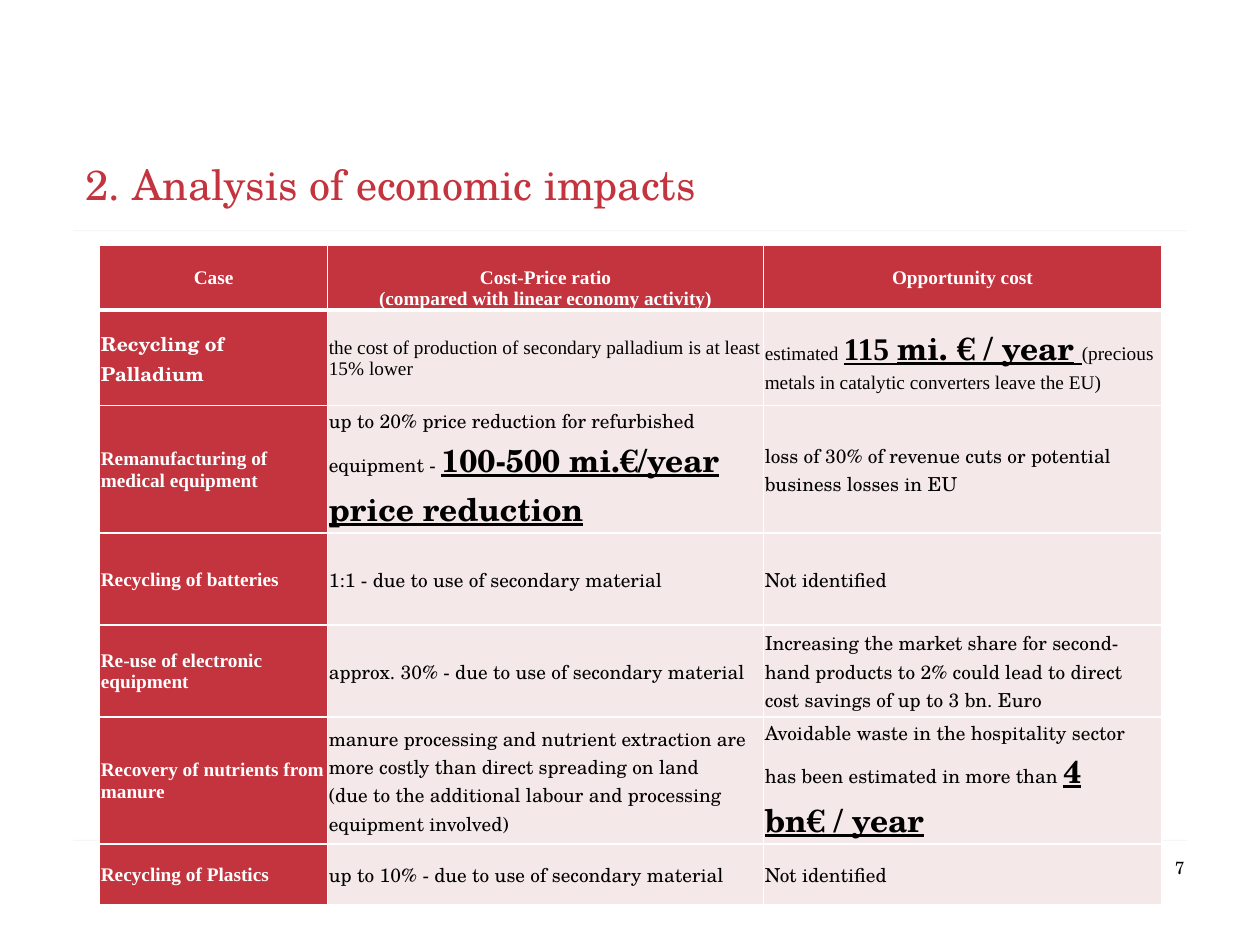
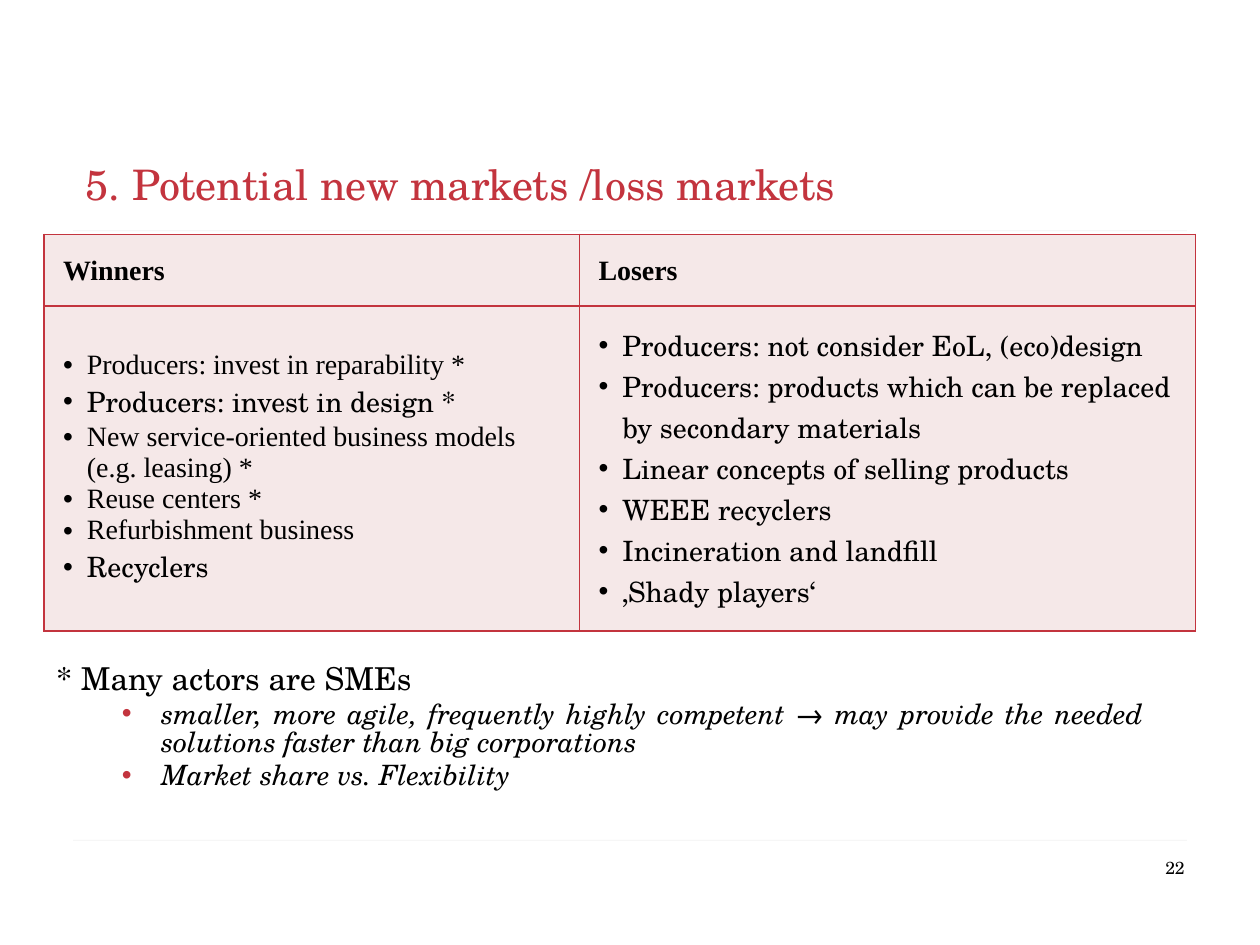
from copy import deepcopy
from lxml import etree
from pptx import Presentation
from pptx.dml.color import RGBColor
from pptx.enum.shapes import MSO_CONNECTOR
from pptx.enum.text import MSO_ANCHOR, PP_ALIGN
from pptx.oxml.ns import qn
from pptx.util import Inches, Pt

LINE = MSO_CONNECTOR.STRAIGHT
MID, LOW = MSO_ANCHOR.MIDDLE, MSO_ANCHOR.BOTTOM
LEFT, MIDST, RIGHT, FULL = PP_ALIGN.LEFT, PP_ALIGN.CENTER, PP_ALIGN.RIGHT, PP_ALIGN.JUSTIFY
COLS = {"red": "C3343E", "pink": "F5E8E8", "rule": "E7E6E6", "ink": "000000", "white": "FFFFFF"}
SERIF, ROMAN = "TeX Gyre Schola", "Times New Roman"

BODY = {"name": SERIF, "size": 11, "color": "ink"}
PLAIN = {**BODY, "name": ROMAN}
LABEL = {**PLAIN, "color": "white", "bold": True}
BIG = {**BODY, "size": 18, "bold": True, "underline": True}
BIGROM = {**BIG, "name": ROMAN}
TITLE = {"name": SERIF, "size": 24, "color": "red"}
PAGE = {**BODY, "size": 10}
ITEM = {**BODY, "size": 16}
ROMIT = {**ITEM, "name": ROMAN}
HEAD = {**ROMIT, "bold": True}
NOTE = {**BODY, "size": 18}
SUB = {**ITEM, "italic": True}


def write(para, runs, align=LEFT, dot=None, ind=0, hang=0):
    para.alignment = align
    if ind:
        props = para._p.get_or_add_pPr()
        props.set("marL", str(Inches(ind)))
        props.set("indent", str(-Inches(hang)))
        tint = etree.SubElement(etree.SubElement(props, qn("a:buClr")), qn("a:srgbClr"))
        tint.set("val", COLS[dot])
        etree.SubElement(props, qn("a:buFont")).set("typeface", "Arial")
        etree.SubElement(props, qn("a:buChar")).set("char", "•")
    for text, form in runs:
        for num, part in enumerate(text.split("\n")):
            if num:
                para.add_line_break()
                para._p.findall(qn("a:br"))[-1].append(deepcopy(run._r.rPr))
            run = para.add_run()
            run.text = part
            for key, val in form.items():
                if key == "color":
                    run.font.color.rgb = RGBColor.from_string(COLS[val])
                else:
                    setattr(run.font, key, Pt(val) if key == "size" else val)


def style(cell, fill, edge, pads, anchor, top=1, base=1):
    props = cell._tc.get_or_add_tcPr()
    for side, width in zip("LRTB", (1, 1, top, base)):
        line = etree.SubElement(props, qn("a:ln" + side), w=str(Pt(width)))
        tint = etree.SubElement(line, qn("a:solidFill"))
        etree.SubElement(tint, qn("a:srgbClr")).set("val", COLS[edge])
    cell.fill.solid()
    cell.fill.fore_color.rgb = RGBColor.from_string(COLS[fill])
    for side, pad in zip(("left", "right", "top", "bottom"), pads):
        setattr(cell, "margin_" + side, Inches(pad))
    cell.vertical_anchor = anchor


prs = Presentation()
prs.slide_width, prs.slide_height = Inches(10), Inches(7.5)

cases = [
    [[("Case", LABEL)],
     [("Cost-Price ratio\n(compared with linear economy activity)", LABEL)],
     [("Opportunity cost", LABEL)]],
    [[("Recycling of Palladium", {**LABEL, "name": SERIF})],
     [("the cost of production of secondary palladium is at least 15% lower", PLAIN)],
     [("estimated ", PLAIN), ("115 ", BIGROM), ("mi. € / year", BIG), (" ", BIGROM),
      ("(precious metals in catalytic converters leave the EU)", PLAIN)]],
    [[("Remanufacturing of medical equipment", LABEL)],
     [("up to 20% price reduction for refurbished equipment - ", BODY),
      ("100-500 mi.€/year price reduction", BIG)],
     [("loss of 30% of revenue cuts or potential business losses in EU", BODY)]],
    [[("Recycling of batteries", LABEL)],
     [("1:1 - due to use of secondary material", BODY)],
     [("Not identified", BODY)]],
    [[("Re-use of electronic equipment", LABEL)],
     [("approx. 30% - due to use of secondary material", BODY)],
     [("Increasing the market share for second-hand products to 2% "
       "could lead to direct cost savings of up to 3 bn. Euro", BODY)]],
    [[("Recovery of nutrients from manure", LABEL)],
     [("manure processing and nutrient extraction are more costly than direct spreading on land\n"
       "(due to the additional labour and processing equipment involved)", BODY)],
     [("Avoidable waste in the hospitality sector has been estimated in more than ", BODY),
      ("4 bn€ / year", BIG)]],
    [[("Recycling of Plastics", LABEL)],
     [("up to 10% - due to use of secondary material", BODY)],
     [("Not identified", BODY)]],
]
sides = [
    ("Winners", [
        ("Producers: invest in reparability *", ROMIT),
        ("Producers: invest in design *", ITEM),
        ("New service-oriented business models (e.g. leasing) *", ROMIT),
        ("Reuse centers *", ROMIT),
        ("Refurbishment business", ROMIT),
        ("Recyclers", ITEM)]),
    ("Losers", [(text, ITEM) for text in (
        "Producers: not consider EoL, (eco)design",
        "Producers: products which can be replaced by secondary materials",
        "Linear concepts of selling products",
        "WEEE recyclers",
        "Incineration and landfill",
        "‚Shady players‘")]),
]
pages = [
    ("2. Analysis of economic impacts", "7", (0.79, 1.95),
     [1.81, 3.46, 3.16], [0.51, 0.76, 1.01, 0.73, 0.73, 1.01, 0.48]),
    ("5. Potential new markets /loss markets", "22", (0.35, 1.86), [4.25, 4.89], [0.54, 2.58]),
]

slides, grids = [], []
for title, page, spot, wides, highs in pages:
    slide = prs.slides.add_slide(prs.slide_layouts[6])
    for y in (6.67, 1.83):
        rule = slide.shapes.add_connector(LINE, Inches(0.58), Inches(y), Inches(9.42), Inches(y))
        rule.line.width = Pt(0.5)
        rule.line.color.rgb = RGBColor.from_string(COLS["rule"])
        tint = rule._element.spPr.find(".//" + qn("a:srgbClr"))
        etree.SubElement(tint, qn("a:alpha")).set("val", "35000")
        etree.SubElement(rule._element.spPr, qn("a:effectLst"))
    for text, form, area, align in (
            (title, TITLE, (0.58, 1.17, 8.83, 0.58), LEFT),
            (page, PAGE, (8.58, 6.75, 0.92, 0.33), RIGHT)):
        frame = slide.shapes.add_textbox(*map(Inches, area)).text_frame
        frame.word_wrap = True
        if form is TITLE:
            frame.vertical_anchor = MID
        write(frame.paragraphs[0], [(text, form)], align)
    size = (*spot, sum(wides), sum(highs))
    grid = slide.shapes.add_table(len(highs), len(wides), *map(Inches, size)).table
    grid.first_row = grid.horz_banding = False
    for col, wide in zip(grid.columns, wides):
        col.width = Inches(wide)
    for row, high in zip(grid.rows, highs):
        row.height = Inches(high)
    slides.append(slide)
    grids.append(grid)

for r, row in enumerate(cases):
    for c, runs in enumerate(row):
        cell = grids[0].cell(r, c)
        style(cell, "pink" if r and c else "red", "white", (0.01, 0.01, 0.01, 0),
              LOW if (r, c) == (0, 1) else MID, 3 if r == 1 else 1, 1 if r else 3)
        write(cell.text_frame.paragraphs[0], runs, LEFT if r else MIDST)

for c, (head, items) in enumerate(sides):
    top, main = (grids[1].cell(r, c) for r in (0, 1))
    for cell, anchor in ((top, LOW), (main, MID)):
        style(cell, "pink", "red", [0.15] * 4, anchor)
    write(top.text_frame.paragraphs[0], [(head, HEAD)])
    for n, item in enumerate(items):
        frame = main.text_frame
        para = frame.add_paragraph() if n else frame.paragraphs[0]
        write(para, [item], dot="ink", ind=0.19, hang=0.19)

frame = slides[1].shapes.add_textbox(*map(Inches, (0.35, 5.23, 8.83, 1.66))).text_frame
frame.word_wrap = True
para = frame.paragraphs[0]
para.line_spacing = 0.83
write(para, [("* Many actors are SMEs", NOTE)], FULL)
for text in ("smaller, more agile, frequently highly competent → may provide "
             "the needed solutions faster than big corporations",
             "Market share vs. Flexibility"):
    para = frame.add_paragraph()
    para.level = 1
    para.line_spacing = 0.83
    para.space_before = Pt(3.2)
    write(para, [(text, SUB)], FULL, "red", 0.83, 0.31)

prs.save("out.pptx")
